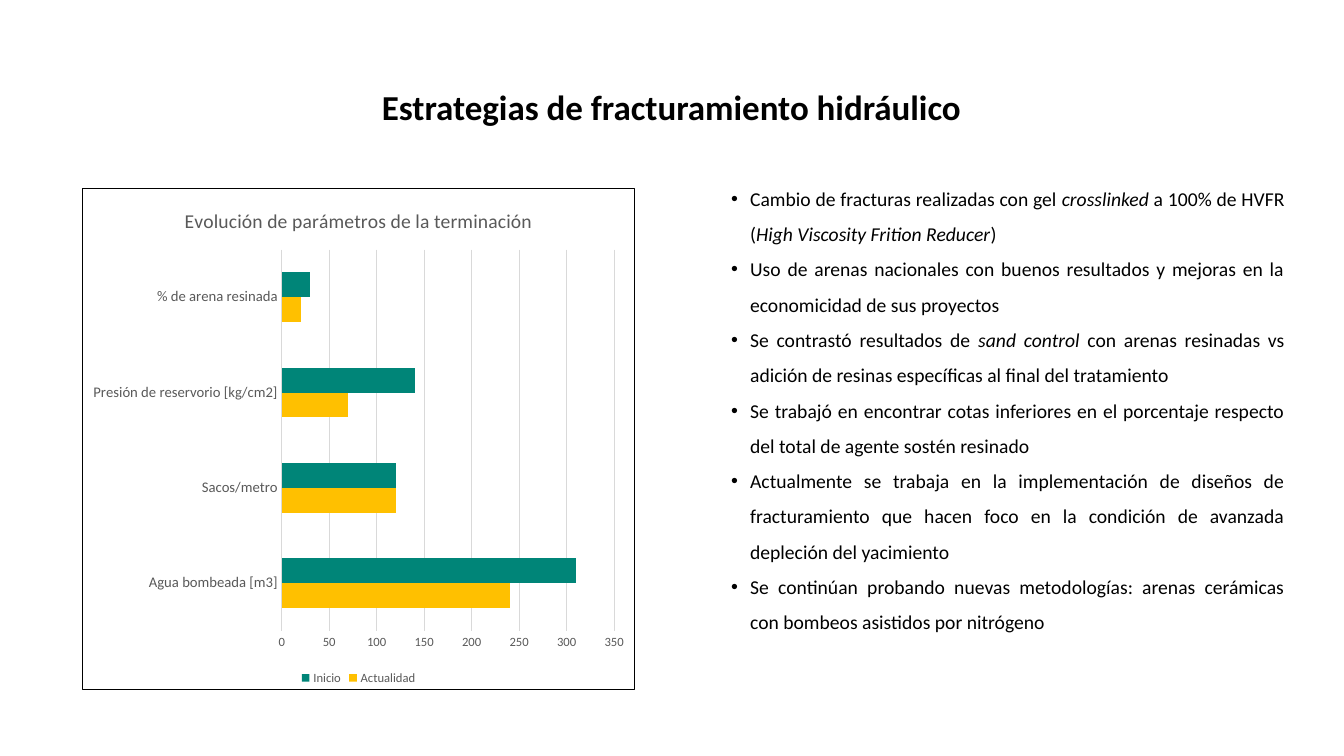
import lxml.etree
import pptx
import pptx.chart.data
import pptx.dml.color
import pptx.enum.chart
import pptx.enum.text
import pptx.oxml
import pptx.oxml.ns
import pptx.util

EMU_PER_PX = 9525
FONT_NAME = "Calibri"
COLORS = {
    "text": "000000",
    "chart_text": "595959",
    "grid": "D9D9D9",
    "current": "FFC000",
    "start": "008578",
}

TITLE = "Estrategias de fracturamiento hidráulico"
# Asterisks enclose the words set in italics.
STRATEGIES = [
    "Cambio de fracturas realizadas con gel *crosslinked* a 100% de HVFR "
    "(*High Viscosity Frition Reducer*)",
    "Uso de arenas nacionales con buenos resultados y mejoras en la "
    "economicidad de sus proyectos",
    "Se contrastó resultados de *sand control *con arenas resinadas vs "
    "adición de resinas específicas al final del tratamiento",
    "Se trabajó en encontrar cotas inferiores en el porcentaje respecto "
    "del total de agente sostén resinado",
    "Actualmente se trabaja en la implementación de diseños de "
    "fracturamiento que hacen foco en la condición de avanzada depleción "
    "del yacimiento",
    "Se continúan probando nuevas metodologías: arenas cerámicas con "
    "bombeos asistidos por nitrógeno",
]
CHART_TITLE = "Evolución de parámetros de la terminación"
CATEGORIES = [
    "Agua bombeada [m3]",
    "Sacos/metro",
    "Presión de reservorio [kg/cm2]",
    "% de arena resinada",
]
SERIES = [
    ("Actualidad", (240, 120, 70, 20), "current"),
    ("Inicio", (310, 120, 140, 30), "start"),
]


def px(length):
    return pptx.util.Emu(length * EMU_PER_PX)


def rgb(name):
    return pptx.dml.color.RGBColor.from_string(COLORS[name])


def format_font(font, size, color, bold=False, italic=False):
    font.name = FONT_NAME
    font.size = pptx.util.Pt(size)
    font.color.rgb = rgb(color)
    font.bold = bold
    font.italic = italic


def format_line(line, color):
    line.color.rgb = rgb(color)
    line.width = pptx.util.Pt(0.75)


def add_text_box(slide, left, top, width, height):
    shape = slide.shapes.add_textbox(px(left), px(top), px(width), px(height))
    shape.text_frame.word_wrap = True
    return shape.text_frame


def add_title(slide):
    paragraph = add_text_box(slide, 24, 88, 1231, 605).paragraphs[0]
    paragraph.text = TITLE
    paragraph.alignment = pptx.enum.text.PP_ALIGN.CENTER
    paragraph.line_spacing = 0.7
    paragraph.space_after = pptx.util.Pt(6)
    format_font(paragraph.runs[0].font, 25, "text", bold=True)


def add_bullet(paragraph, indent):
    properties = paragraph._p.get_or_add_pPr()
    properties.set("marL", str(px(indent)))
    properties.set("indent", str(px(-indent)))
    font = lxml.etree.SubElement(properties, pptx.oxml.ns.qn("a:buFont"))
    font.set("typeface", "Arial")
    character = lxml.etree.SubElement(properties, pptx.oxml.ns.qn("a:buChar"))
    character.set("char", "•")


def add_strategies(slide):
    text_frame = add_text_box(slide, 687, 162, 546, 447)
    text_frame.auto_size = pptx.enum.text.MSO_AUTO_SIZE.SHAPE_TO_FIT_TEXT
    for number, strategy in enumerate(STRATEGIES):
        paragraph = text_frame.add_paragraph() if number else text_frame.paragraphs[0]
        add_bullet(paragraph, 18)
        paragraph.alignment = pptx.enum.text.PP_ALIGN.JUSTIFY
        paragraph.line_spacing = 1.5
        for part, words in enumerate(strategy.split("*")):
            run = paragraph.add_run()
            run.text = words
            format_font(run.font, 14, "text", italic=part % 2 == 1)


def add_chart_border(chart):
    """Give the chart area a thin outline, which has no public property."""
    border = pptx.oxml.parse_xml(
        f"<c:spPr {pptx.oxml.ns.nsdecls('c', 'a')}><a:noFill/>"
        f'<a:ln w="{pptx.util.Pt(0.75)}"><a:solidFill>'
        f'<a:srgbClr val="{COLORS["text"]}"/>'
        "</a:solidFill></a:ln></c:spPr>"
    )
    chart._chartSpace.find(pptx.oxml.ns.qn("c:chart")).addnext(border)


def format_axes(chart):
    for axis, size in ((chart.category_axis, 10.5), (chart.value_axis, 9)):
        axis.major_tick_mark = pptx.enum.chart.XL_TICK_MARK.NONE
        axis.minor_tick_mark = pptx.enum.chart.XL_TICK_MARK.NONE
        format_font(axis.tick_labels.font, size, "chart_text")
    chart.category_axis.has_major_gridlines = False
    format_line(chart.category_axis.format.line, "grid")
    chart.value_axis.has_major_gridlines = True
    format_line(chart.value_axis.major_gridlines.format.line, "grid")
    chart.value_axis.format.line.fill.background()


def add_parameter_chart(slide):
    data = pptx.chart.data.CategoryChartData()
    data.categories = CATEGORIES
    for name, values, _ in SERIES:
        data.add_series(name, values)
    chart = slide.shapes.add_chart(
        pptx.enum.chart.XL_CHART_TYPE.BAR_CLUSTERED,
        px(78), px(179), px(527), px(478), data,
    ).chart
    format_font(chart.font, 10, "text")
    add_chart_border(chart)

    chart.has_title = True
    title_frame = chart.chart_title.text_frame
    title_frame.text = CHART_TITLE
    format_font(title_frame.paragraphs[0].runs[0].font, 14, "chart_text")
    chart.chart_title.include_in_layout = False

    chart.has_legend = True
    chart.legend.position = pptx.enum.chart.XL_LEGEND_POSITION.BOTTOM
    chart.legend.include_in_layout = False
    format_font(chart.legend.font, 9, "chart_text")

    format_axes(chart)
    plot = chart.plots[0]
    plot.gap_width = 182
    plot.vary_by_categories = False
    for series, (_, _, color) in zip(plot.series, SERIES):
        series.format.fill.solid()
        series.format.fill.fore_color.rgb = rgb(color)


def main():
    presentation = pptx.Presentation()
    presentation.slide_width = px(1280)
    presentation.slide_height = px(720)
    slide = presentation.slides.add_slide(presentation.slide_layouts[6])
    add_title(slide)
    add_strategies(slide)
    add_parameter_chart(slide)
    presentation.save("out.pptx")


if __name__ == "__main__":
    main()
